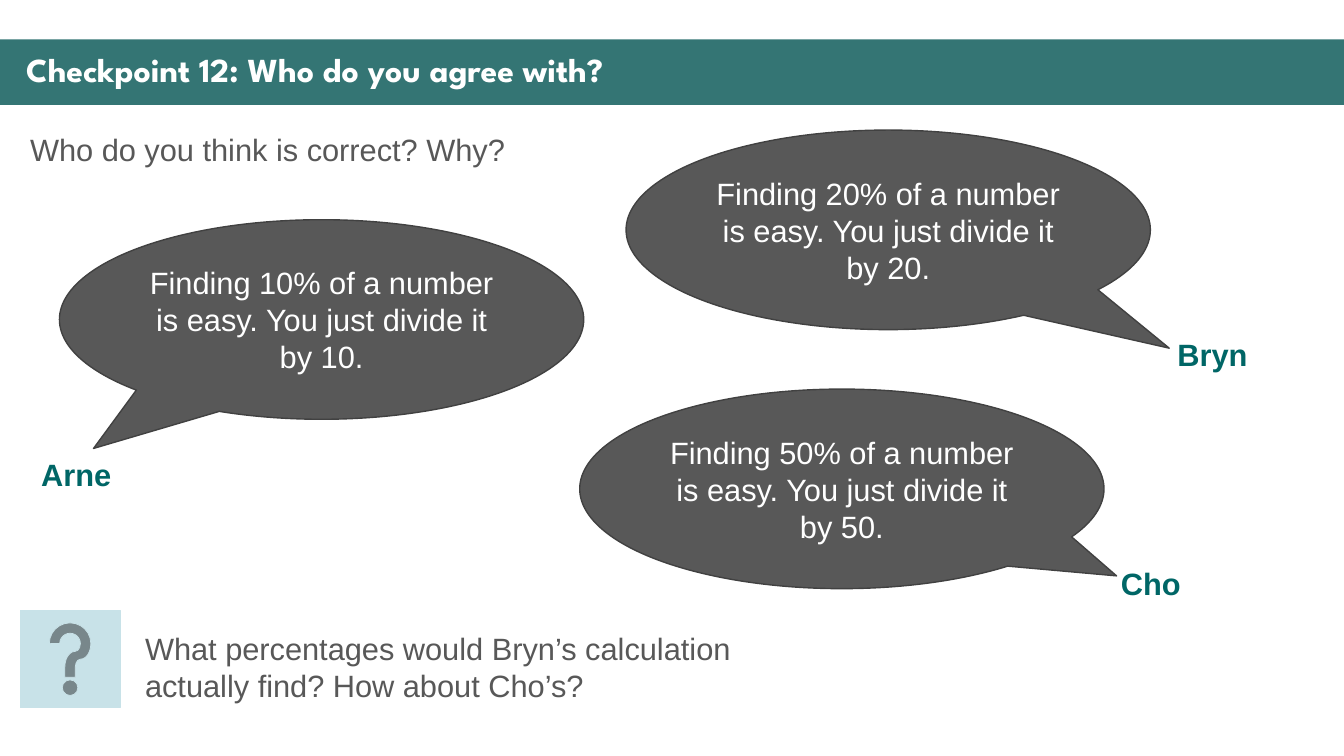
from pptx import Presentation
from pptx.dml.color import RGBColor
from pptx.enum.shapes import MSO_SHAPE
from pptx.enum.text import MSO_ANCHOR, MSO_AUTO_SIZE, PP_ALIGN
from pptx.util import Inches, Pt

# Content
TITLE = "Checkpoint 12: Who do you agree with?"
PROMPT = "Who do you think is correct? Why?"
QUESTION = "What percentages would Bryn’s calculation actually find? How about Cho’s?"
CLAIM = "Finding {0}% of a number is easy. You just divide it by {0}."
# speaker, number, bubble left and top, pointer offsets, name box
SPEAKERS = [
    ("Arne", 10, (0.59, 2.18), (-0.435, 0.646), (0.31, 4.47, 0.9, 0.47)),
    ("Bryn", 20, (6.21, 1.29), (0.536, 0.593), (11.58, 3.28, 0.9, 0.47)),
    ("Cho", 50, (5.75, 3.86), (0.524, 0.436), (11.02, 5.55, 0.8, 0.47)),
]

# Format
WIDTH, HEIGHT = 13.33, 7.5
BUBBLE_SIZE = (5.2, 1.98)
WHITE = RGBColor(0xFF, 0xFF, 0xFF)
BAND = RGBColor(0x34, 0x75, 0x74)
PALE = RGBColor(0xC8, 0xE2, 0xE8)
GREY = RGBColor(0x58, 0x58, 0x58)
OUTLINE = RGBColor(0x41, 0x41, 0x41)
TEAL = RGBColor(0x00, 0x66, 0x66)
BODY_FONT = {"name": "Arial", "size": Pt(22), "bold": False}
NAME_FONT = {**BODY_FONT, "bold": True}
TITLE_FONT = {"name": "League Spartan", "size": Pt(24), "bold": True}
BODY_PARA = {"space_before": Pt(4.4), "alignment": PP_ALIGN.LEFT}
BUBBLE_PARA = {**BODY_PARA, "alignment": PP_ALIGN.CENTER}
TITLE_PARA = {"line_spacing": 0.9, "alignment": PP_ALIGN.LEFT}


def apply(target, values):
    for name, value in values.items():
        setattr(target, name, value)


def write(shape, text, font, color, para_format, frame_format):
    frame = shape.text_frame
    apply(frame, frame_format)
    para = frame.paragraphs[0]
    apply(para, para_format)
    span = para.add_run()
    span.text = text
    apply(span.font, font)
    span.font.color.rgb = color


def add_block(page, kind, box, fill, line=None, weight=1):
    shape = page.shapes.add_shape(kind, *map(Inches, box))
    shape.shadow.inherit = False
    shape.fill.solid()
    shape.fill.fore_color.rgb = fill
    if line is None:
        shape.line.fill.background()
    else:
        shape.line.color.rgb = line
        shape.line.width = Pt(weight)
    return shape


def add_label(page, text, box, font, color, wrap=False):
    label = page.shapes.add_textbox(*map(Inches, box))
    write(label, text, font, color, BODY_PARA,
          {"word_wrap": wrap, "auto_size": MSO_AUTO_SIZE.SHAPE_TO_FIT_TEXT})


def main():
    deck = Presentation()
    apply(deck, {"slide_width": Inches(WIDTH), "slide_height": Inches(HEIGHT)})
    page = deck.slides.add_slide(deck.slide_layouts[5])

    # Title on its band
    title = page.shapes.title
    band = add_block(page, MSO_SHAPE.RECTANGLE, (0, 0.39, WIDTH, 0.65), BAND)
    band._element.addnext(title._element)
    apply(title, {"left": Inches(0.16), "top": Inches(0.48),
                  "width": Inches(13.04), "height": Inches(0.47)})
    write(title, TITLE, TITLE_FONT, WHITE, TITLE_PARA,
          {"vertical_anchor": MSO_ANCHOR.MIDDLE, "auto_size": MSO_AUTO_SIZE.NONE})

    # Prompt and closing question
    add_block(page, MSO_SHAPE.ACTION_BUTTON_HELP, (0.2, 6.06, 0.99, 0.96),
              PALE, PALE, 0.5)
    add_label(page, PROMPT, (0.2, 1.25, 4.97, 0.47), BODY_FONT, GREY)
    add_label(page, QUESTION, (1.34, 6.2, 6.76, 1.29), BODY_FONT, GREY, wrap=True)

    # Speech bubbles with names
    for name, number, corner, pointer, name_box in SPEAKERS:
        bubble = add_block(page, MSO_SHAPE.OVAL_CALLOUT, corner + BUBBLE_SIZE,
                           GREY, OUTLINE)
        for index, offset in enumerate(pointer):
            bubble.adjustments[index] = offset
        write(bubble, CLAIM.format(number), BODY_FONT, WHITE, BUBBLE_PARA,
              {"word_wrap": True, "vertical_anchor": MSO_ANCHOR.MIDDLE})
        add_label(page, name, name_box, NAME_FONT, TEAL)

    deck.save("out.pptx")


if __name__ == "__main__":
    main()
